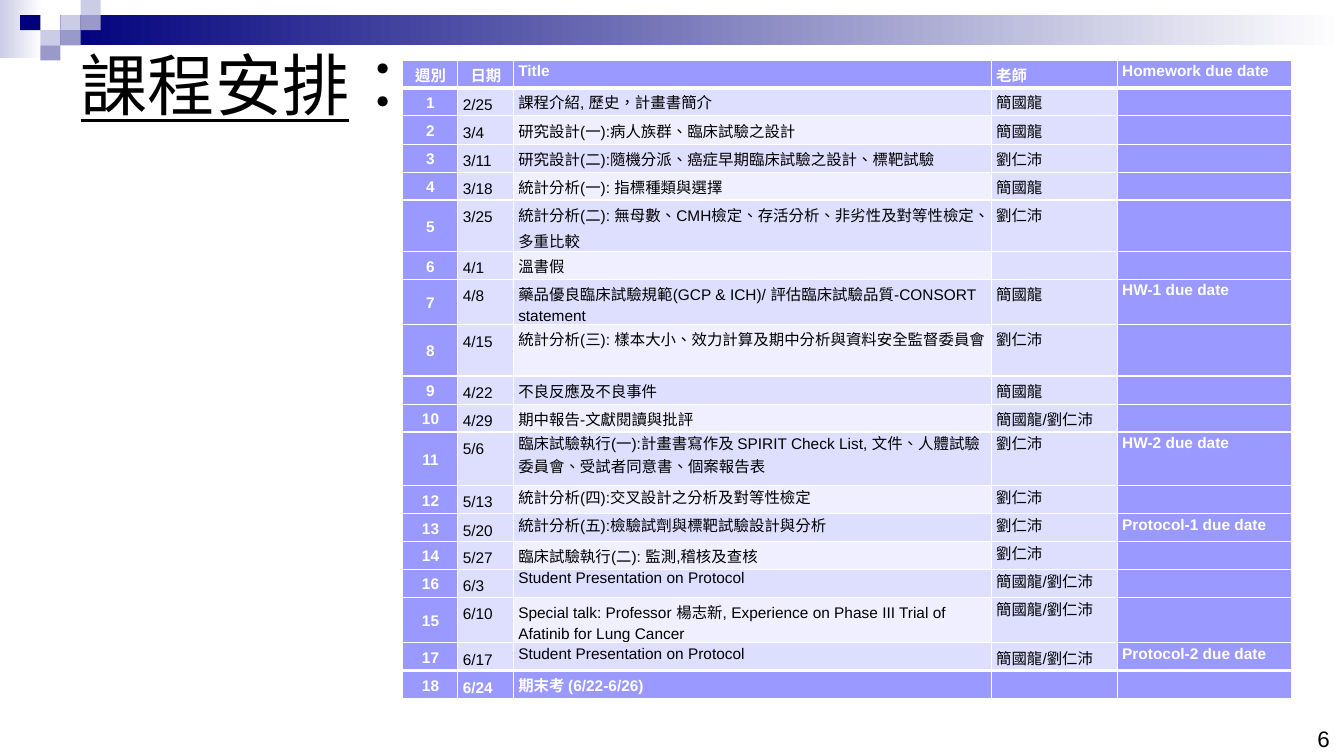
from dataclasses import dataclass

from lxml.etree import SubElement
from pptx import Presentation
from pptx.dml.color import RGBColor
from pptx.enum.lang import MSO_LANGUAGE_ID
from pptx.enum.shapes import MSO_SHAPE
from pptx.enum.text import MSO_ANCHOR, PP_ALIGN
from pptx.oxml.ns import qn
from pptx.util import Inches, Pt


@dataclass(frozen=True)
class Theme:
    """Colours and type sizes of the slide."""
    font: str = "Arial"
    ink: str = "000000"
    white: str = "FFFFFF"
    navy: str = "00007D"
    mid: str = "9999CC"
    pale: str = "CCCCE6"
    accent: str = "9999FF"
    band: str = "DEDEFF"
    light_band: str = "EFEFFF"
    title_size: int = 48
    number_size: int = 16
    table_size: int = 11


THEME = Theme()
LOOSE, WIDE, SINGLE = 1.15, 1.5, 1.0
TILE_WIDTH, TILE_HEIGHT = 0.2, 0.15
TILES = [
    (3, 1, THEME.pale), (4, 0, THEME.pale), (4, 1, THEME.mid),
    (2, 2, THEME.pale), (1, 1, THEME.navy), (3, 2, THEME.mid),
    (2, 3, THEME.mid),
]
COLUMN_WIDTHS = [0.55, 0.55, 4.74, 1.25, 1.73]
ROW_HEIGHTS = [0.27, 0.28, 0.28, 0.28, 0.27, 0.51, 0.26, 0.45, 0.51, 0.28,
               0.27, 0.53, 0.28, 0.27, 0.27, 0.28, 0.45, 0.27, 0.28]
SCHEDULE = [
    ("週別", "日期", "Title", "老師", "Homework due date"),
    ("1", "2/25", "課程介紹, 歷史，計畫書簡介", "簡國龍", ""),
    ("2", "3/4", "研究設計(一):病人族群、臨床試驗之設計", "簡國龍", ""),
    ("3", "3/11", "研究設計(二):隨機分派、癌症早期臨床試驗之設計、標靶試驗", "劉仁沛", ""),
    ("4", "3/18", "統計分析(一): 指標種類與選擇", "簡國龍", ""),
    ("5", "3/25", "統計分析(二): 無母數、CMH檢定、存活分析、非劣性及對等性檢定、多重比較", "劉仁沛", ""),
    ("6", "4/1", "溫書假", "", ""),
    ("7", "4/8", "藥品優良臨床試驗規範(GCP & ICH)/ 評估臨床試驗品質-CONSORT statement",
     "簡國龍", "HW-1 due date"),
    ("8", "4/15", "統計分析(三): 樣本大小、效力計算及期中分析與資料安全監督委員會", "劉仁沛", ""),
    ("9", "4/22", "不良反應及不良事件", "簡國龍", ""),
    ("10", "4/29", "期中報告-文獻閱讀與批評", "簡國龍/劉仁沛", ""),
    ("11", "5/6", "臨床試驗執行(一):計畫書寫作及 SPIRIT Check List, 文件、人體試驗委員會、受試者同意書、個案報告表",
     "劉仁沛", "HW-2 due date"),
    ("12", "5/13", "統計分析(四):交叉設計之分析及對等性檢定", "劉仁沛", ""),
    ("13", "5/20", "統計分析(五):檢驗試劑與標靶試驗設計與分析", "劉仁沛", "Protocol-1 due date"),
    ("14", "5/27", "臨床試驗執行(二): 監測,稽核及查核", "劉仁沛", ""),
    ("16", "6/3", "Student Presentation on Protocol", "簡國龍/劉仁沛", ""),
    ("15", "6/10", "Special talk: Professor 楊志新, Experience on Phase III Trial of Afatinib for Lung Cancer",
     "簡國龍/劉仁沛", ""),
    ("17", "6/17", "Student Presentation on Protocol", "簡國龍/劉仁沛", "Protocol-2 due date"),
    ("18", "6/24", "期末考 (6/22-6/26)", "", ""),
]
LAST = len(SCHEDULE) - 1
WEEK, DATE, TOPIC, TEACHER, HOMEWORK = range(5)
SINGLE_SPACED = {TOPIC: {"11", "12", "13", "16"},
                 TEACHER: {"11", "12", "13", "14", "16", "15"}}


def style_span(span, size, color, bold=False):
    """Set the font, language, size, colour and weight of a run."""
    span.font.name = THEME.font
    span.font.language_id = MSO_LANGUAGE_ID.TRADITIONAL_CHINESE
    span.font.size = Pt(size)
    span.font.bold = bold
    span.font.color.rgb = RGBColor.from_string(color)


def add_block(page, left, top, width, height, start, end=None):
    """Add a borderless rectangle, with a gradient when an end colour is given."""
    block = page.shapes.add_shape(MSO_SHAPE.RECTANGLE, Inches(left), Inches(top),
                                  Inches(width), Inches(height))
    block.shadow.inherit = False
    block.line.fill.background()
    if end:
        block.fill.gradient()
        block.fill.gradient_angle = 0
        for stop, color in zip(block.fill.gradient_stops, (start, end)):
            stop.color.rgb = RGBColor.from_string(color)
    else:
        block.fill.solid()
        block.fill.fore_color.rgb = RGBColor.from_string(start)


def add_text(page, left, top, width, height, text, size, anchor, align):
    """Add a text box with one paragraph and return the paragraph."""
    box = page.shapes.add_textbox(Inches(left), Inches(top), Inches(width), Inches(height))
    frame = box.text_frame
    frame.word_wrap = True
    frame.vertical_anchor = anchor
    frame.margin_left = frame.margin_right = Inches(0.13)
    frame.margin_top = frame.margin_bottom = Inches(0.07)
    frame.text = text
    para = frame.paragraphs[0]
    para.alignment = align
    style_span(para.runs[0], size, THEME.ink)
    return para


def set_borders(cell, row):
    """Draw white cell borders, heavier below the header and above the last row."""
    properties = cell._tc.get_or_add_tcPr()
    top = 3 if row in (1, LAST) else 1
    bottom = 3 if row in (0, LAST - 1) else 1
    for side, width in (("L", 1), ("R", 1), ("T", top), ("B", bottom)):
        line = SubElement(properties, qn(f"a:ln{side}"), w=str(Pt(width)))
        fill = SubElement(line, qn("a:solidFill"))
        SubElement(fill, qn("a:srgbClr"), val=THEME.white)


def cell_fill(row, column):
    """Return the fill colour for a place in the schedule."""
    if row in (0, LAST) or column in (WEEK, HOMEWORK):
        return THEME.accent
    return THEME.light_band if column == TOPIC and row % 2 == 0 else THEME.band


def line_spacing(row, column):
    """Return the line spacing for a place in the schedule."""
    if column == DATE and row > 0:
        return WIDE
    return SINGLE if SCHEDULE[row][WEEK] in SINGLE_SPACED.get(column, ()) else LOOSE


def fill_cell(cell, row, column):
    """Write and format one cell of the schedule."""
    cell.margin_left, cell.margin_right = Inches(0.05), Inches(0.04)
    cell.margin_top = cell.margin_bottom = 0
    set_borders(cell, row)
    color = cell_fill(row, column)
    cell.fill.solid()
    cell.fill.fore_color.rgb = RGBColor.from_string(color)
    if column == WEEK and row > 0:
        cell.vertical_anchor = MSO_ANCHOR.MIDDLE
    text = SCHEDULE[row][column]
    para = cell.text_frame.paragraphs[0]
    if not text:
        SubElement(para._p, qn("a:endParaRPr"), sz=str(THEME.table_size * 100))
        return
    para.text = text
    para.line_spacing = line_spacing(row, column)
    if column == WEEK or (row == 0 and column == DATE):
        para.alignment = PP_ALIGN.CENTER
    if SCHEDULE[row][WEEK] == "16" and column in (TOPIC, TEACHER):
        para.space_after = Pt(9)
    strong = color == THEME.accent
    style_span(para.runs[0], THEME.table_size, THEME.white if strong else THEME.ink, strong)


def add_schedule(page):
    """Add the course schedule table."""
    table = page.shapes.add_table(len(SCHEDULE), len(COLUMN_WIDTHS), Inches(3.99), Inches(0.6),
                                  Inches(sum(COLUMN_WIDTHS)), Inches(sum(ROW_HEIGHTS))).table
    table.first_row = table.horz_banding = False
    for column, width in zip(table.columns, COLUMN_WIDTHS):
        column.width = Inches(width)
    for row, height in enumerate(ROW_HEIGHTS):
        table.rows[row].height = Inches(height)
        for column in range(len(COLUMN_WIDTHS)):
            fill_cell(table.cell(row, column), row, column)


def main():
    """Build the course schedule slide."""
    deck = Presentation()
    deck.slide_width, deck.slide_height = Inches(13.33), Inches(7.5)
    page = deck.slides.add_slide(deck.slide_layouts[6])
    add_block(page, 0, 0, 0.42, 0.58, THEME.pale, THEME.white)
    add_block(page, 0.6, 0.15, 12.73, 0.3, THEME.navy, THEME.white)
    for column, row, color in TILES:
        add_block(page, column * TILE_WIDTH, row * TILE_HEIGHT, TILE_WIDTH, TILE_HEIGHT, color)
    add_text(page, 10.21, 7.03, 3.11, 0.5, "6", THEME.number_size,
             MSO_ANCHOR.BOTTOM, PP_ALIGN.RIGHT)
    title = add_text(page, 0.67, 0.08, 12, 1.5, "課程安排", THEME.title_size,
                     MSO_ANCHOR.MIDDLE, PP_ALIGN.LEFT)
    title.runs[0].font.underline = True
    colon = title.add_run()
    colon.text = "："
    style_span(colon, THEME.title_size, THEME.ink)
    add_schedule(page)
    deck.save("out.pptx")


if __name__ == "__main__":
    main()
